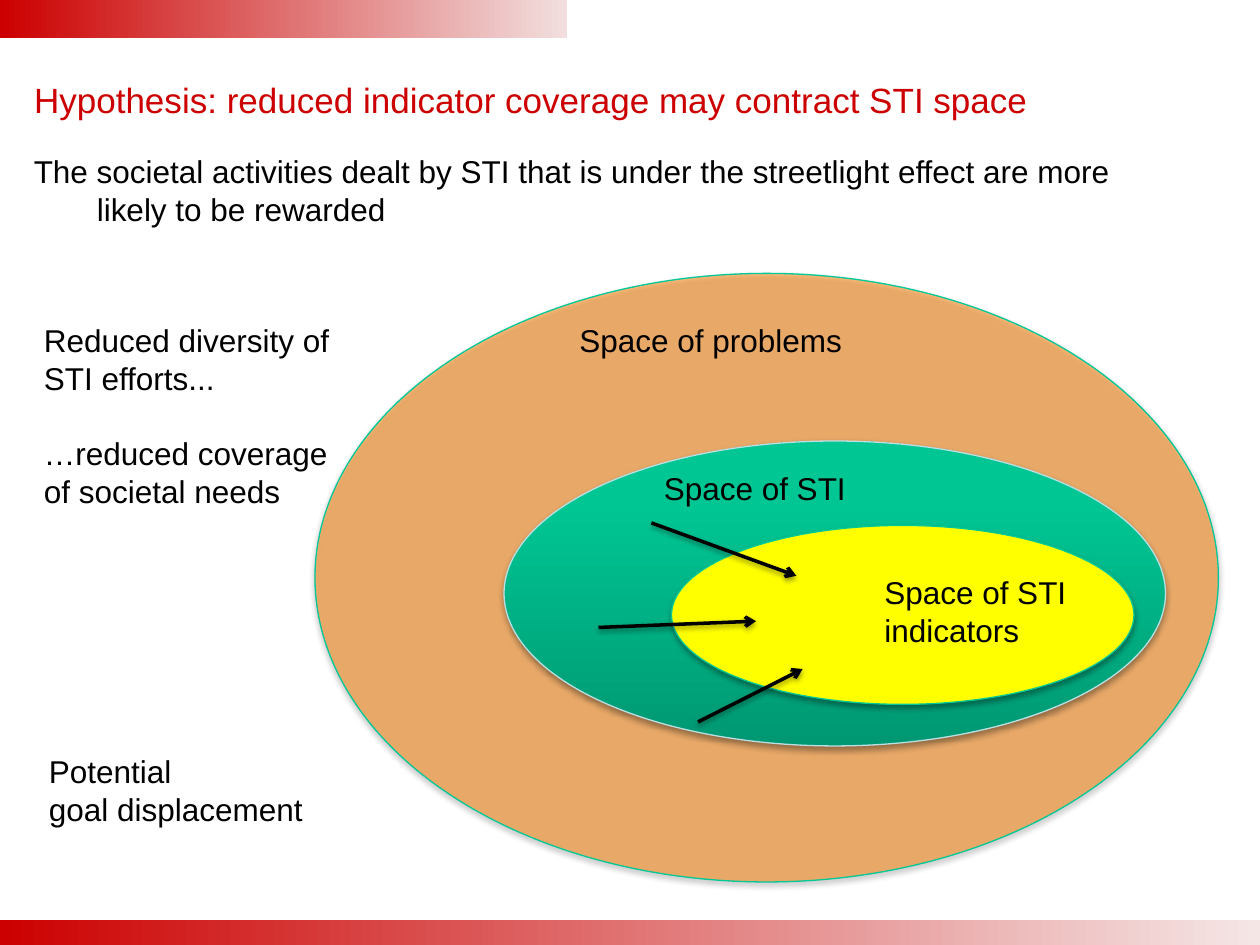
from lxml.etree import SubElement
from pptx import Presentation
from pptx.dml.color import RGBColor
from pptx.enum.shapes import MSO_CONNECTOR, MSO_SHAPE
from pptx.enum.text import MSO_ANCHOR, MSO_AUTO_SIZE, PP_ALIGN
from pptx.oxml.ns import qn
from pptx.util import Inches, Pt

RED = RGBColor(0xCC, 0x00, 0x00)
PALE_RED = RGBColor(0xF5, 0xE6, 0xE6)
PALE_PINK = RGBColor(0xF2, 0xDE, 0xDE)
ORANGE = RGBColor(0xFF, 0x80, 0x00)
GREEN = RGBColor(0x00, 0xC8, 0x96)
MID_GREEN = RGBColor(0x00, 0xC6, 0x94)
DARK_GREEN = RGBColor(0x00, 0x98, 0x72)
PALE_BLUE = RGBColor(0xBB, 0xE0, 0xE3)
YELLOW = RGBColor(0xFF, 0xFF, 0x00)
BLACK = RGBColor(0x00, 0x00, 0x00)


class StiSlide:
    """Draws the parts of one slide in a shared style."""

    font = "Arial"
    body_size = Pt(18)
    title_size = Pt(20)

    def __init__(self, slide):
        self.slide = slide

    def add_words(self, paragraph, text, size, color):
        paragraph.alignment = PP_ALIGN.LEFT
        run = paragraph.add_run()
        run.text = text
        run.font.name = self.font
        run.font.size = size
        run.font.color.rgb = color

    def title(self, text, *box):
        title = self.slide.shapes.title
        title.left, title.top, title.width, title.height = map(Inches, box)
        title.text_frame.vertical_anchor = MSO_ANCHOR.MIDDLE
        title.text_frame.auto_size = MSO_AUTO_SIZE.NONE
        self.add_words(title.text_frame.paragraphs[0], text, self.title_size, RED)

    def text(self, lines, *box, wrap=False, hanging=0, gaps=None):
        frame = self.slide.shapes.add_textbox(*map(Inches, box)).text_frame
        frame.word_wrap = wrap
        frame.auto_size = MSO_AUTO_SIZE.SHAPE_TO_FIT_TEXT
        for index, line in enumerate(lines):
            paragraph = frame.add_paragraph() if index else frame.paragraphs[0]
            self.add_words(paragraph, line, self.body_size, BLACK)
            if gaps and index in gaps:
                paragraph.space_before = gaps[index]
            if hanging:
                properties = paragraph._p.get_or_add_pPr()
                properties.set("marL", str(Inches(hanging)))
                properties.set("indent", str(-Inches(hanging)))

    def gradient(self, shape, start, end, angle=0, end_position=1.0):
        shape.fill.gradient()
        shape.fill.gradient_angle = angle
        first, last = shape.fill.gradient_stops
        first.color.rgb, last.color.rgb = start, end
        first.position, last.position = 0, end_position

    def bar(self, end, *box):
        bar = self.slide.shapes.add_shape(MSO_SHAPE.RECTANGLE, *map(Inches, box))
        bar.shadow.inherit = False
        bar.line.fill.background()
        self.gradient(bar, RED, end)

    def shadow(self, effects, distance, opacity):
        shadow = SubElement(effects, qn("a:outerShdw"), blurRad="40000",
                            dist=str(distance), dir="5400000", rotWithShape="0")
        color = SubElement(shadow, qn("a:srgbClr"), val=str(BLACK))
        SubElement(color, qn("a:alpha"), val=str(opacity * 1000))

    def ellipse(self, outline, *box, fill=None, opacity=100):
        ellipse = self.slide.shapes.add_shape(MSO_SHAPE.OVAL, *map(Inches, box))
        ellipse.line.color.rgb = outline
        ellipse.line.width = Pt(0.75)
        if fill is not None:
            ellipse.fill.solid()
            ellipse.fill.fore_color.rgb = fill
        if opacity < 100:
            color = ellipse._element.spPr.find(f"{qn('a:solidFill')}/{qn('a:srgbClr')}")
            SubElement(color, qn("a:alpha"), val=str(opacity * 1000))
        ellipse.shadow.inherit = False
        self.shadow(ellipse._element.spPr.find(qn("a:effectLst")), 23000, 35)
        return ellipse

    def arrow(self, *ends):
        arrow = self.slide.shapes.add_connector(MSO_CONNECTOR.STRAIGHT, *map(Inches, ends))
        arrow.line.color.rgb = BLACK
        arrow.line.width = Pt(2)
        SubElement(arrow.line._get_or_add_ln(), qn("a:tailEnd"), type="arrow")
        effects = SubElement(arrow._element.spPr, qn("a:effectLst"))
        self.shadow(effects, 20000, 38)


def main():
    presentation = Presentation()
    presentation.slide_width, presentation.slide_height = Inches(10), Inches(7.5)
    sti = StiSlide(presentation.slides.add_slide(presentation.slide_layouts[5]))

    sti.bar(PALE_RED, 0, 7.3, 10, 0.2)
    sti.bar(PALE_PINK, 0, 0, 4.5, 0.3)
    sti.title("Hypothesis: reduced indicator coverage may contract STI space",
              0.17, 0.33, 9.08, 0.92)

    sti.ellipse(GREEN, 2.5, 2.17, 7.17, 4.83, fill=ORANGE, opacity=50)
    sti.text(["Space of problems"], 4.5, 2.5, 2.31, 0.4)
    sti_space = sti.ellipse(PALE_BLUE, 4, 3.5, 5.25, 2.42)
    sti.gradient(sti_space, DARK_GREEN, MID_GREEN, angle=90, end_position=0.8)
    sti.text(["Space of STI"], 5.17, 3.67, 1.66, 0.4)
    sti.ellipse(GREEN, 5.33, 4.17, 3.67, 1.42, fill=YELLOW)
    sti.text(["Space of STI", "indicators"], 6.92, 4.5, 1.66, 0.71)

    for ends in ((4.75, 4.98, 6, 4.93), (5.54, 5.73, 6.37, 5.31), (5.17, 4.15, 6.32, 4.57)):
        sti.arrow(*ends)

    sti.text(["The societal activities dealt by STI that is under the streetlight "
              "effect are more likely to be rewarded"],
             0.17, 1.16, 8.83, 0.71, wrap=True, hanging=0.5)
    sti.text(["Reduced diversity of", "STI efforts...", "…reduced coverage", "of societal needs"],
             0.25, 2.5, 2.5, 1.62, gaps={2: Pt(21.5)})
    sti.text(["Potential", "goal displacement"], 0.29, 5.92, 2.24, 0.71)

    presentation.save("out.pptx")


if __name__ == "__main__":
    main()
